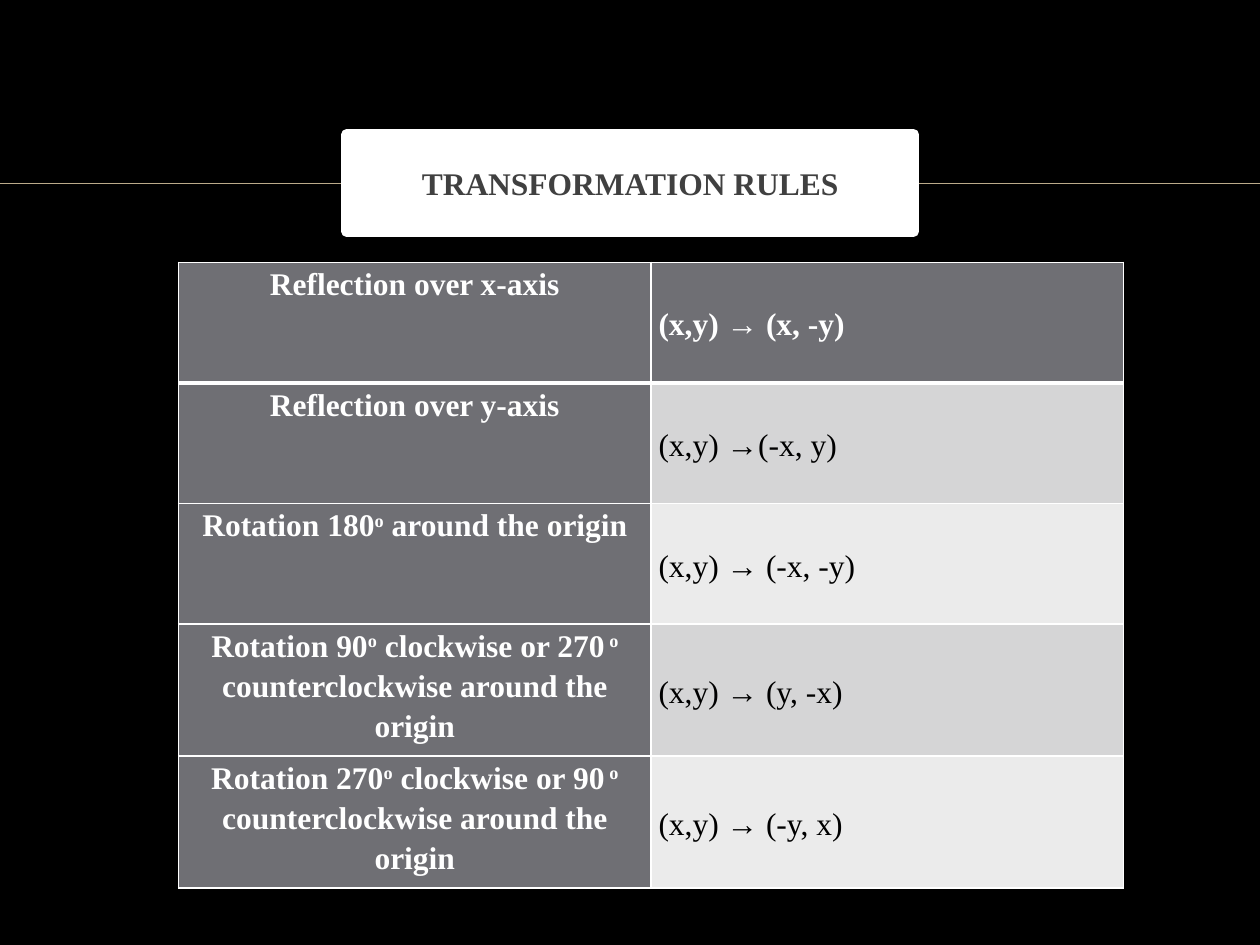
from dataclasses import dataclass
from lxml.etree import SubElement
from pptx import Presentation
from pptx.dml.color import RGBColor
from pptx.enum.shapes import MSO_CONNECTOR, MSO_SHAPE
from pptx.enum.text import MSO_ANCHOR, PP_ALIGN
from pptx.oxml.ns import qn
from pptx.util import Cm, Pt

HUES = {
    "back": "000000", "white": "FFFFFF", "title": "404040", "rule": "BBAA8A",
    "head": "6F6F74", "dark": "D5D5D6", "light": "EBEBEB", "ink": "000000",
}
FONT = "Times New Roman"


@dataclass
class Rule:
    name: str
    map: str
    high: float


RULES = [
    Rule("Reflection over x-axis", "(x,y) → (x, -y)", 2.43),
    Rule("Reflection over y-axis", "(x,y) →(-x, y)", 2.43),
    Rule("Rotation 180^o^ around the origin", "(x,y) → (-x, -y)", 2.43),
    Rule("Rotation 90^o^ clockwise or 270^ o^ counterclockwise around the origin",
         "(x,y) → (y, -x)", 2.66),
    Rule("Rotation 270^o^ clockwise or 90^ o^ counterclockwise around the origin",
         "(x,y) → (-y, x)", 2.66),
]


def hue(key: str) -> RGBColor:
    return RGBColor.from_string(HUES[key])


def paint(item, key: str) -> None:
    item.fill.solid()
    item.fill.fore_color.rgb = hue(key)


def write(frame, text: str, *, color="white", bold=True, align=PP_ALIGN.CENTER,
          size=18, space=1.15, before=0) -> None:
    frame.word_wrap = True
    para = frame.paragraphs[0]
    para.alignment = align
    para.line_spacing = space
    para.space_before = Pt(before)
    for spot, part in enumerate(text.split("^")):
        run = para.add_run()
        run.text = part
        run.font.name = FONT
        run.font.size = Pt(size)
        run.font.bold = bold
        run.font.color.rgb = hue(color)
        if spot % 2:
            run._r.get_or_add_rPr().set("baseline", "30000")


def edge(cell, side: str, width: float) -> None:
    line = SubElement(cell._tc.get_or_add_tcPr(), qn(f"a:ln{side}"), w=str(Pt(width)))
    fill = SubElement(line, qn("a:solidFill"))
    SubElement(fill, qn("a:srgbClr"), val=HUES["white"])


def fill_cell(cell, row: int, key: str) -> None:
    cell.margin_left = cell.margin_right = Cm(0.15)
    cell.margin_top = cell.margin_bottom = 0
    widths = {"L": 1, "R": 1, "T": 3 if row == 1 else 1, "B": 3 if row == 0 else 1}
    for side, width in widths.items():
        edge(cell, side, width)
    paint(cell, key)


def draw_line(slide) -> None:
    line = slide.shapes.add_connector(MSO_CONNECTOR.STRAIGHT, 0, Cm(3.7), Cm(25.4), Cm(3.7))
    line.line.color.rgb = hue("rule")
    line.line.width = Pt(1)
    SubElement(line._element.spPr, qn("a:effectLst"))


def draw_title(slide) -> None:
    box = slide.shapes.add_shape(MSO_SHAPE.RECTANGLE, Cm(6.99), Cm(2.71), Cm(11.43), Cm(1.96))
    box.shadow.inherit = False
    paint(box, "white")
    box.line.color.rgb = hue("white")
    box.line.width = Pt(6)
    box.text_frame.vertical_anchor = MSO_ANCHOR.MIDDLE
    write(box.text_frame, "TRANSFORMATION RULES", color="title", space=1.0, before=4)


def draw_table(slide, rules: list[Rule]) -> None:
    high = sum(rule.high for rule in rules)
    grid = slide.shapes.add_table(len(rules), 2, Cm(3.6), Cm(5.29), Cm(19.05), Cm(high)).table
    for row, rule in enumerate(rules):
        grid.rows[row].height = Cm(rule.high)
        left, right = grid.cell(row, 0), grid.cell(row, 1)
        top = row == 0
        fill_cell(left, row, "head")
        fill_cell(right, row, "head" if top else "dark" if row % 2 else "light")
        right.vertical_anchor = MSO_ANCHOR.MIDDLE
        write(left.text_frame, rule.name)
        write(right.text_frame, rule.map, color="white" if top else "ink",
              bold=top, align=PP_ALIGN.LEFT)


def main() -> None:
    deck = Presentation()
    deck.slide_width, deck.slide_height = Cm(25.4), Cm(19.05)
    slide = deck.slides.add_slide(deck.slide_layouts[6])
    paint(slide.background, "back")
    draw_line(slide)
    draw_table(slide, RULES)
    draw_title(slide)
    deck.save("out.pptx")


if __name__ == "__main__":
    main()
